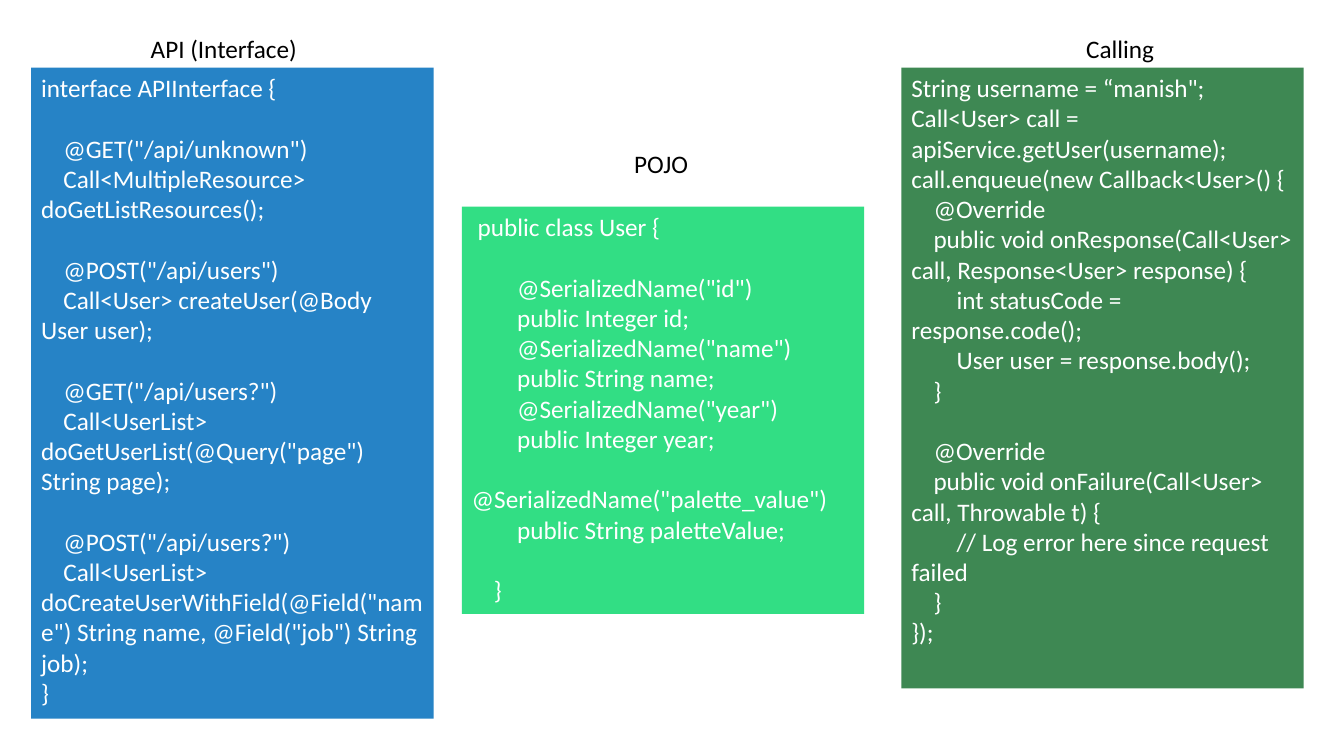
from pptx import Presentation
from pptx import util as u
from pptx.dml import color
from pptx.enum import shapes, text

PX = 9144  # 100 px to the inch
LINE_GAP = 30
STEP = 5.6  # width of one indent column in px


def rgb(value):
    return color.RGBColor.from_string(value)


def write(para, words, ink):
    span = para.add_run()
    span.text = words
    look = {"name": "Calibri", "size": u.Pt(18)}
    for key, value in look.items():
        setattr(span.font, key, value)
    span.font.color.rgb = rgb(ink)


API_CODE = """interface APIInterface {

    @GET("/api/unknown")
    Call<MultipleResource> doGetListResources();

    @POST("/api/users")
    Call<User> createUser(@Body User user);

    @GET("/api/users?")
    Call<UserList> doGetUserList(@Query("page") String page);

    @POST("/api/users?")
    Call<UserList> doCreateUserWithField(@Field("name") String name, @Field("job") String job);
}"""

POJO_CODE = """ public class User {

        @SerializedName("id")
        public Integer id;
        @SerializedName("name")
        public String name;
        @SerializedName("year")
        public Integer year;

@SerializedName("palette_value")
        public String paletteValue;

    }"""

CALLING_CODE = """String username = “manish";
Call<User> call = apiService.getUser(username);
call.enqueue(new Callback<User>() {
    @Override
    public void onResponse(Call<User> call, Response<User> response) {
        int statusCode = response.code();
        User user = response.body();
    }

    @Override
    public void onFailure(Call<User> call, Throwable t) {
        // Log error here since request failed
    }
});"""

# Code panels: left, top, height, fill, code
panels = [
    (31, 67, 646, "2683C6", API_CODE),
    (458, 205, 404, "32DE84", POJO_CODE),
    (894, 67, 616, "3E8853", CALLING_CODE),
]
PANEL_WIDTH = 399

# Headings: left, top, width, alignment, words
headings = [
    (108, 28, 228, text.PP_ALIGN.CENTER, "API (Interface)"),
    (997, 28, 228, text.PP_ALIGN.CENTER, "Calling"),
    (619, 142, 95, text.PP_ALIGN.LEFT, "POJO"),
]
HEADING_HEIGHT = 40

deck = Presentation()
deck.slide_width, deck.slide_height = 1333 * PX, 750 * PX
page = deck.slides.add_slide(deck.slide_layouts[6])

# Panels, with blank code lines as spacing and leading columns as indents
for left, top, height, fill, code in panels:
    box = page.shapes.add_shape(shapes.MSO_SHAPE.RECTANGLE, left * PX, top * PX,
                                PANEL_WIDTH * PX, height * PX)
    box.shadow.inherit = False
    box.fill.solid()
    box.fill.fore_color.rgb = rgb(fill)
    box.line.fill.background()
    frame = box.text_frame
    frame.word_wrap = True
    frame.vertical_anchor = text.MSO_ANCHOR.TOP

    para, gap = frame.paragraphs[0], 0
    for number, line in enumerate(code.split("\n")):
        if not line:
            gap = LINE_GAP
            continue
        if number:
            para = frame.add_paragraph()
        words = line.lstrip()
        indent = round((len(line) - len(words)) * STEP)
        para.alignment = text.PP_ALIGN.LEFT
        para.space_before = u.Emu(gap * PX)
        properties = para._p.get_or_add_pPr()
        properties.set("marL", "0")
        properties.set("indent", str(indent * PX))
        write(para, words, "FFFFFF")
        gap = 0

# Headings
for left, top, width, alignment, words in headings:
    box = page.shapes.add_textbox(left * PX, top * PX, width * PX, HEADING_HEIGHT * PX)
    box.text_frame.word_wrap = True
    para = box.text_frame.paragraphs[0]
    para.alignment = alignment
    write(para, words, "000000")

deck.save("out.pptx")
